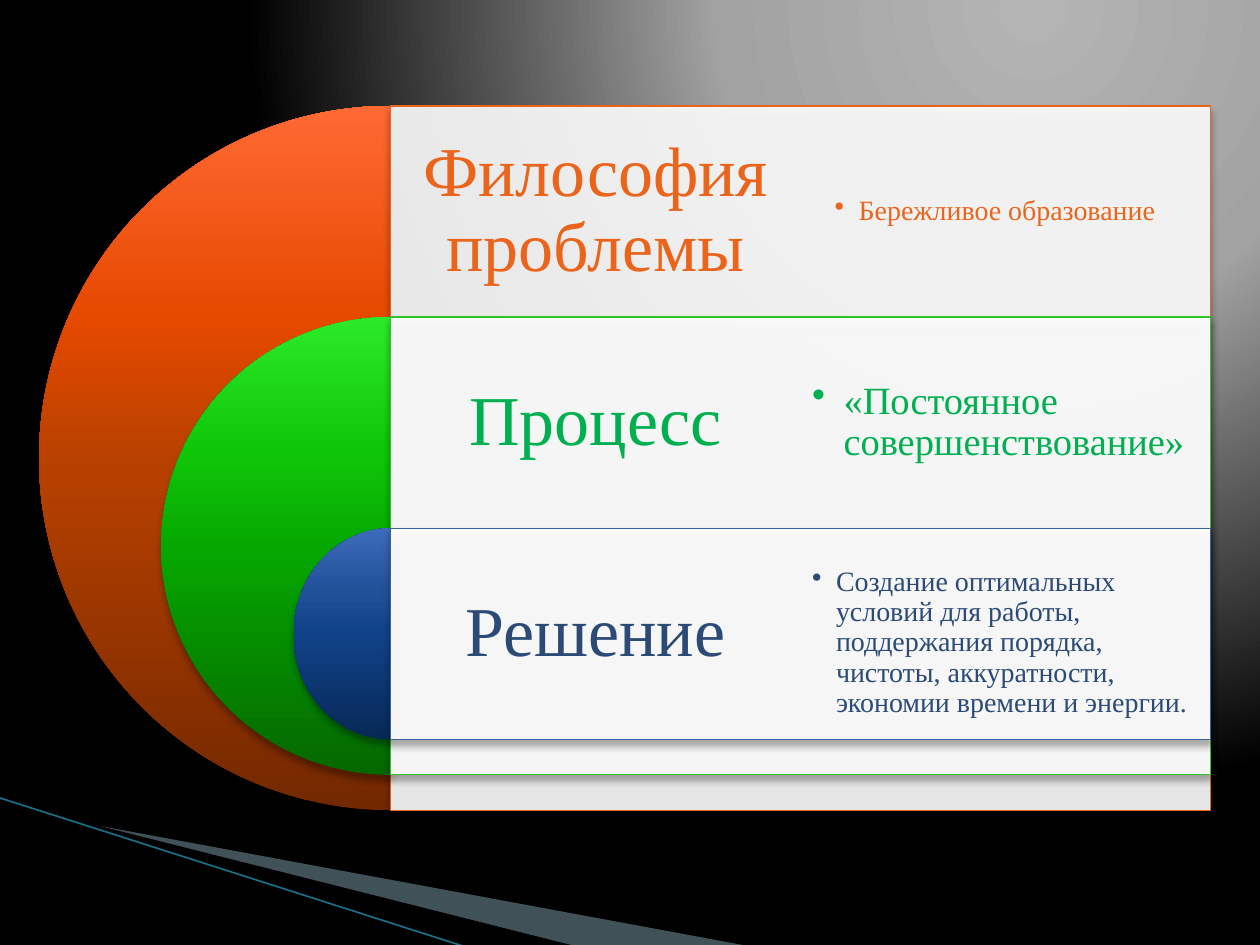
from pptx import Presentation
from pptx.dml.color import RGBColor
from pptx.enum.shapes import MSO_CONNECTOR, MSO_SHAPE
from pptx.enum.text import MSO_ANCHOR, PP_ALIGN
from pptx.oxml import parse_xml
from pptx.oxml.ns import nsdecls, qn
from pptx.util import Inches, Pt

LINE, PIE, RECTANGLE = MSO_CONNECTOR.STRAIGHT, MSO_SHAPE.CHORD, MSO_SHAPE.RECTANGLE
PIE = MSO_SHAPE.PIE
MIDDLE, CENTER, LEFT = MSO_ANCHOR.MIDDLE, PP_ALIGN.CENTER, PP_ALIGN.LEFT
FONT = "Times New Roman"

BLACK = RGBColor(0x00, 0x00, 0x00)
WHITE = RGBColor(0xFF, 0xFF, 0xFF)
PALE_BLUE = RGBColor(0xA0, 0xCB, 0xDC)
LINE_BLUE = RGBColor(0x1A, 0x6E, 0x86)
ORANGE = RGBColor(0xEB, 0x64, 0x1B)
GREEN = RGBColor(0x00, 0xB0, 0x50)
GREEN_EDGE = RGBColor(0x2F, 0xC5, 0x29)
NAVY = RGBColor(0x2B, 0x4A, 0x76)
NAVY_EDGE = RGBColor(0x39, 0x63, 0x9D)

# Tier grid, in inches: each tier starts one row lower and ends one step higher.
TOP, ROW, STEP = 0.84, 5.03 / 3, 0.28
AXIS, COLUMN = 3.1, 3.255

# Heading, heading colour, edge, pie width, pie stops, detail, size, inset, indent, drop
TIERS = [
    ("Философия проблемы", ORANGE, ORANGE, 5.58,
     [(0, "732800"), (50, "B94100"), (70, "E64900"), (100, "FF6933")],
     "Бережливое образование", 16, 0.27, 0.19, 0),
    ("Процесс", GREEN, GREEN_EDGE, 3.64,
     [(0, "046800"), (50, "06A800"), (70, "0FC509"), (100, "2CEA28")],
     "«Постоянное совершенствование»", 22, 0.09, 0.25, 0),
    ("Решение", NAVY, NAVY_EDGE, 1.54,
     [(0, "072956"), (50, "104288"), (70, "205199"), (100, "3D6BB9")],
     "Создание оптимальных условий для работы, поддержания порядка, чистоты, "
     "аккуратности, экономии времени и энергии.", 16, 0.09, 0.19, 0.07),
]
SHADOW = (
    f'<a:effectLst {nsdecls("a")}><a:outerShdw blurRad="{Pt(4)}" dist="{Pt(3)}" '
    'dir="5400000" rotWithShape="0"><a:srgbClr val="000000"><a:alpha val="35000"/>'
    '</a:srgbClr></a:outerShdw></a:effectLst>'
)


def gradient(stops, direction):
    """Return gradient fill XML; direction is its lin or path element."""
    marks = "".join(
        f'<a:gs pos="{place * 1000}"><a:srgbClr val="{color}"/></a:gs>'
        for place, color in stops
    )
    return (f'<a:gradFill {nsdecls("a")} rotWithShape="1"><a:gsLst>{marks}</a:gsLst>'
            f'{direction}</a:gradFill>')


def add_text(left, top, inset, text, size, color, align, indent=0):
    """Add a one-paragraph box of one grid cell, bulleted when indented."""
    box = page.shapes.add_textbox(Inches(left), Inches(top), Inches(COLUMN), Inches(ROW))
    frame = box.text_frame
    frame.word_wrap = True
    frame.vertical_anchor = MIDDLE
    frame.margin_left = frame.margin_right = Inches(inset)
    frame.margin_top = frame.margin_bottom = Inches(inset)
    para = frame.paragraphs[0]
    para.alignment = align
    para.line_spacing = 0.9
    if indent:
        para.level = 1
        properties = para._p.get_or_add_pPr()
        properties.set("marL", str(Inches(indent)))
        properties.set("indent", str(-Inches(indent)))
        properties.append(parse_xml(f'<a:buChar {nsdecls("a")} char="•"/>'))
    span = para.add_run()
    span.text = text
    span.font.name = FONT
    span.font.size = Pt(size)
    span.font.color.rgb = color


deck = Presentation()
deck.slide_width, deck.slide_height = Inches(10), Inches(7.5)
page = deck.slides.add_slide(deck.slide_layouts[6])

glow = gradient(
    [(0, "B4B4B4"), (40, "A2A2A2"), (100, "000000")],
    '<a:path path="circle"><a:fillToRect l="65000" t="0" r="0" b="98000"/></a:path>',
)
page.element.cSld.insert(0, parse_xml(
    f'<p:bg {nsdecls("p", "a")}><p:bgPr>{glow}<a:effectLst/></p:bgPr></p:bg>'))

# Rays in the lower left corner
RAYS = [
    (PALE_BLUE, 40, [(0.55, 6.51), (5.95, 7.51), (4.56, 7.51), (0.55, 6.5)]),
    (BLACK, 100, [(0.53, 6.49), (4.57, 7.51), (3.72, 7.52), (0.54, 6.5)]),
]
for color, opacity, points in RAYS:
    corners = [(Inches(x), Inches(y)) for x, y in points]
    outline = page.shapes.build_freeform(*corners[0])
    outline.add_line_segments(corners[1:], close=True)
    ray = outline.convert_to_shape()
    ray.shadow.inherit = False
    ray.fill.solid()
    ray.fill.fore_color.rgb = color
    ray.line.fill.background()
    ray.element.spPr.find(".//" + qn("a:srgbClr")).append(
        parse_xml(f'<a:alpha {nsdecls("a")} val="{opacity * 1000}"/>'))

edge = page.shapes.add_connector(
    LINE, Inches(-0.01), Inches(6.33), Inches(3.71), Inches(7.52))
edge.line.color.rgb = LINE_BLUE
edge.line.width = Pt(0.95)
edge.element.spPr.append(parse_xml(f'<a:effectLst {nsdecls("a")}/>'))

# Nested tiers: half disc, panel, heading and detail
for index, tier in enumerate(TIERS):
    heading, color, border, width, stops, detail, size, inset, indent, drop = tier
    top = TOP + index * ROW
    rows = len(TIERS) - index
    height = rows * ROW + (rows - 1) * STEP

    pie = page.shapes.add_shape(
        PIE, Inches(AXIS - width / 2), Inches(top), Inches(width), Inches(height))
    pie.adjustments[0], pie.adjustments[1] = 54, 162
    pie.line.fill.background()
    pie.fill.gradient()
    plain = pie.element.spPr.find(qn("a:gradFill"))
    pie.element.spPr.replace(
        plain, parse_xml(gradient(stops, '<a:lin ang="16200000" scaled="0"/>')))

    panel = page.shapes.add_shape(
        RECTANGLE, Inches(AXIS), Inches(top), Inches(2 * COLUMN), Inches(height))
    panel.fill.solid()
    panel.fill.fore_color.rgb = WHITE
    panel.element.spPr.find(qn("a:solidFill"))[0].append(
        parse_xml(f'<a:alpha {nsdecls("a")} val="90000"/>'))
    panel.line.color.rgb = border
    panel.line.width = Pt(0.75)

    for shape in (pie, panel):
        shape.element.spPr.append(parse_xml(SHADOW))

    add_text(AXIS, top, 0.17, heading, 40, color, CENTER)
    add_text(AXIS + COLUMN, top + drop, inset, detail, size, color, LEFT, indent)

deck.save("out.pptx")
